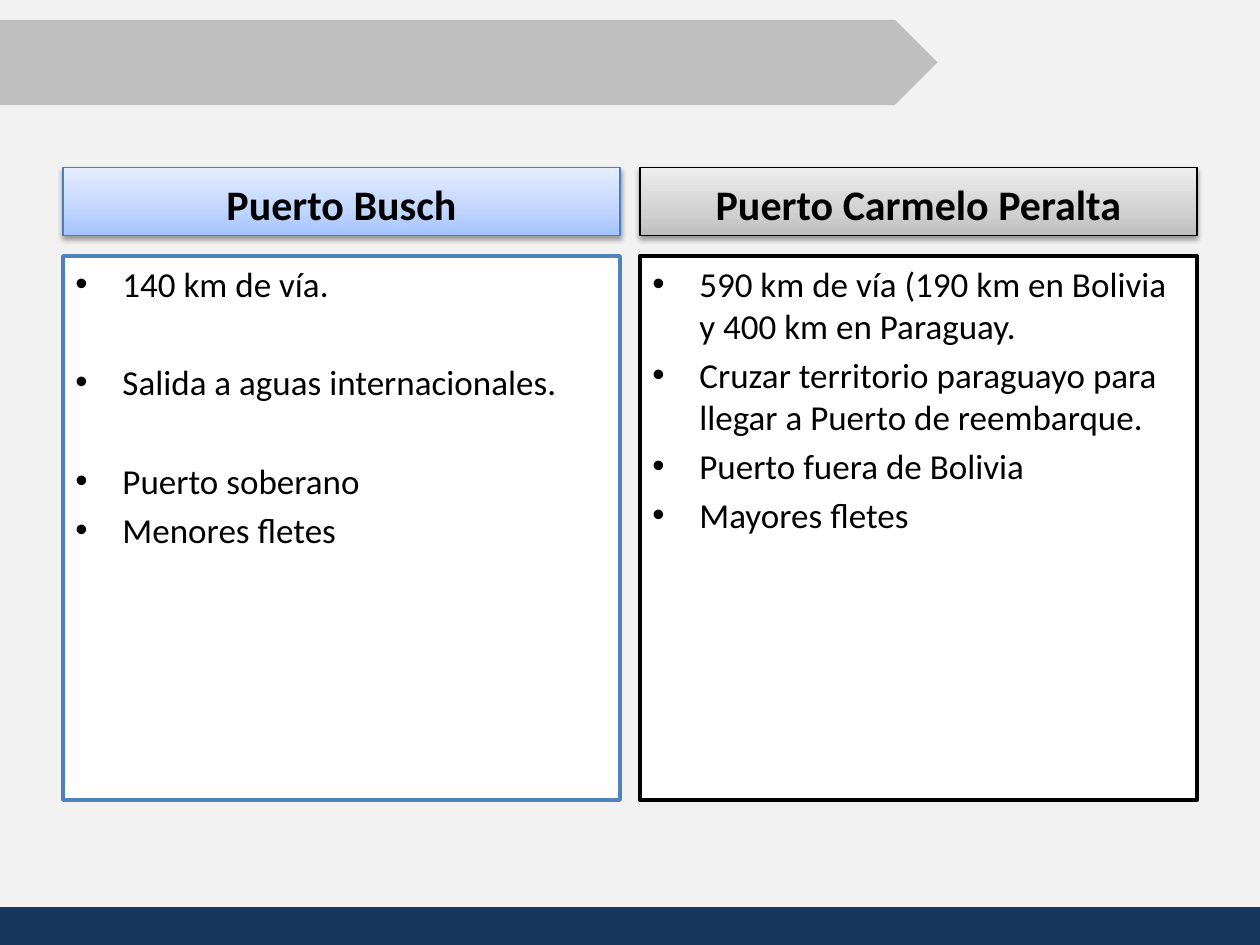
from dataclasses import dataclass

from lxml.etree import SubElement
from pptx import Presentation
from pptx.dml.color import RGBColor
from pptx.enum.shapes import MSO_SHAPE as Shape
from pptx.enum.text import MSO_ANCHOR as Anchor, PP_ALIGN as Align
from pptx.oxml.ns import qn
from pptx.util import Cm, Pt
from copy import deepcopy

COLORS = {
    "background": "F2F2F2",
    "banner": "BFBFBF",
    "footer": "17375E",
    "panel": "FFFFFF",
    "text": "000000",
    "blue_edge": "4B7EBC",
    "blue": "4F81BD",
    "black": "000000",
}
FONT = "Calibri"
COLUMN_WIDTH = 11.23
COLUMN_GAP = 0.4
COLUMN_LEFT = 1.27
HEADING_TOP, HEADING_HEIGHT = 3.38, 1.37
PANEL_TOP, PANEL_HEIGHT = 5.16, 10.97
BULLET_INDENT = Cm(0.95)
CLOSE, WIDE = 4, 32.4


@dataclass
class Bullet:
    text: str
    space_before: float = CLOSE


@dataclass
class Column:
    heading: str
    gradient: tuple[str, str, str]
    heading_line: str
    panel_line: str
    bullets: list[Bullet]


COLUMNS = [
    Column("Puerto Busch", ("A4C4FF", "BFD4FF", "E6EEFF"), "blue_edge", "blue", [
        Bullet("140 km de vía.", 0),
        Bullet("Salida a aguas internacionales.", WIDE),
        Bullet("Puerto soberano", WIDE),
        Bullet("Menores fletes"),
    ]),
    Column("Puerto Carmelo Peralta", ("BDBDBD", "D1D1D1", "EEEEEE"), "black", "black", [
        Bullet("590 km de vía (190 km en Bolivia y 400 km en Paraguay.", 0),
        Bullet("Cruzar territorio paraguayo para llegar a Puerto de reembarque."),
        Bullet("Puerto fuera de Bolivia"),
        Bullet("Mayores fletes"),
    ]),
]


def rgb(name: str) -> RGBColor:
    return RGBColor.from_string(COLORS[name])


def add_block(slide, kind, left: float, top: float, width: float, height: float,
              fill: str, line: str | None = None, line_width: float = 0):
    shape = slide.shapes.add_shape(kind, Cm(left), Cm(top), Cm(width), Cm(height))
    shape.shadow.inherit = False
    shape.fill.solid()
    shape.fill.fore_color.rgb = rgb(fill)
    if line:
        shape.line.color.rgb = rgb(line)
        shape.line.width = Pt(line_width)
    else:
        shape.line.fill.background()
    return shape


def set_gradient(shape, colors: tuple[str, str, str]) -> None:
    shape.fill.gradient()
    shape.fill.gradient_angle = 90
    stop_list = shape._element.spPr.find(qn("a:gradFill")).find(qn("a:gsLst"))
    stop_list.append(deepcopy(stop_list[-1]))
    for stop, color, position in zip(shape.fill.gradient_stops, colors, (0, 0.35, 1)):
        stop.color.rgb = RGBColor.from_string(color)
        stop.position = position


def add_shadow(shape) -> None:
    effects = shape._element.spPr.find(qn("a:effectLst"))
    shadow = SubElement(effects, qn("a:outerShdw"), blurRad=str(Pt(3.1)),
                        dist=str(Pt(1.6)), dir="5400000", rotWithShape="0")
    color = SubElement(shadow, qn("a:srgbClr"), val=COLORS["black"])
    SubElement(color, qn("a:alpha"), val="38000")


def format_runs(paragraph, size: float, bold: bool = False) -> None:
    for run in paragraph.runs:
        run.font.name = FONT
        run.font.size = Pt(size)
        run.font.bold = bold
        run.font.color.rgb = rgb("text")


def add_heading(slide, column: Column, left: float) -> None:
    shape = add_block(slide, Shape.RECTANGLE, left, HEADING_TOP, COLUMN_WIDTH,
                      HEADING_HEIGHT, "panel", column.heading_line, 0.75)
    set_gradient(shape, column.gradient)
    add_shadow(shape)
    text_frame = shape.text_frame
    text_frame.word_wrap = True
    text_frame.vertical_anchor = Anchor.BOTTOM
    text_frame.text = column.heading
    paragraph = text_frame.paragraphs[0]
    paragraph.alignment = Align.CENTER
    format_runs(paragraph, 24, bold=True)


def add_panel(slide, column: Column, left: float) -> None:
    shape = add_block(slide, Shape.RECTANGLE, left, PANEL_TOP, COLUMN_WIDTH,
                      PANEL_HEIGHT, "panel", column.panel_line, 2)
    text_frame = shape.text_frame
    text_frame.word_wrap = True
    text_frame.vertical_anchor = Anchor.TOP
    text_frame.text = "\n".join(bullet.text for bullet in column.bullets)
    for paragraph, bullet in zip(text_frame.paragraphs, column.bullets):
        paragraph.alignment = Align.LEFT
        paragraph.space_before = Pt(bullet.space_before)
        properties = paragraph._p.get_or_add_pPr()
        properties.set("marL", str(BULLET_INDENT))
        properties.set("indent", str(-BULLET_INDENT))
        SubElement(properties, qn("a:buFont"), typeface="Arial")
        SubElement(properties, qn("a:buChar"), char="•")
        format_runs(paragraph, 20)


def main() -> None:
    presentation = Presentation()
    presentation.slide_width = Cm(25.4)
    presentation.slide_height = Cm(19.05)
    slide = presentation.slides.add_slide(presentation.slide_layouts[6])
    slide.background.fill.solid()
    slide.background.fill.fore_color.rgb = rgb("background")
    add_block(slide, Shape.PENTAGON, 0, 0.4, 18.9, 1.72, "banner")
    add_block(slide, Shape.RECTANGLE, 0, 18.29, 25.4, 0.76, "footer")
    for index, column in enumerate(COLUMNS):
        left = COLUMN_LEFT + index * (COLUMN_WIDTH + COLUMN_GAP)
        add_heading(slide, column, left)
        add_panel(slide, column, left)
    presentation.save("out.pptx")


if __name__ == "__main__":
    main()
